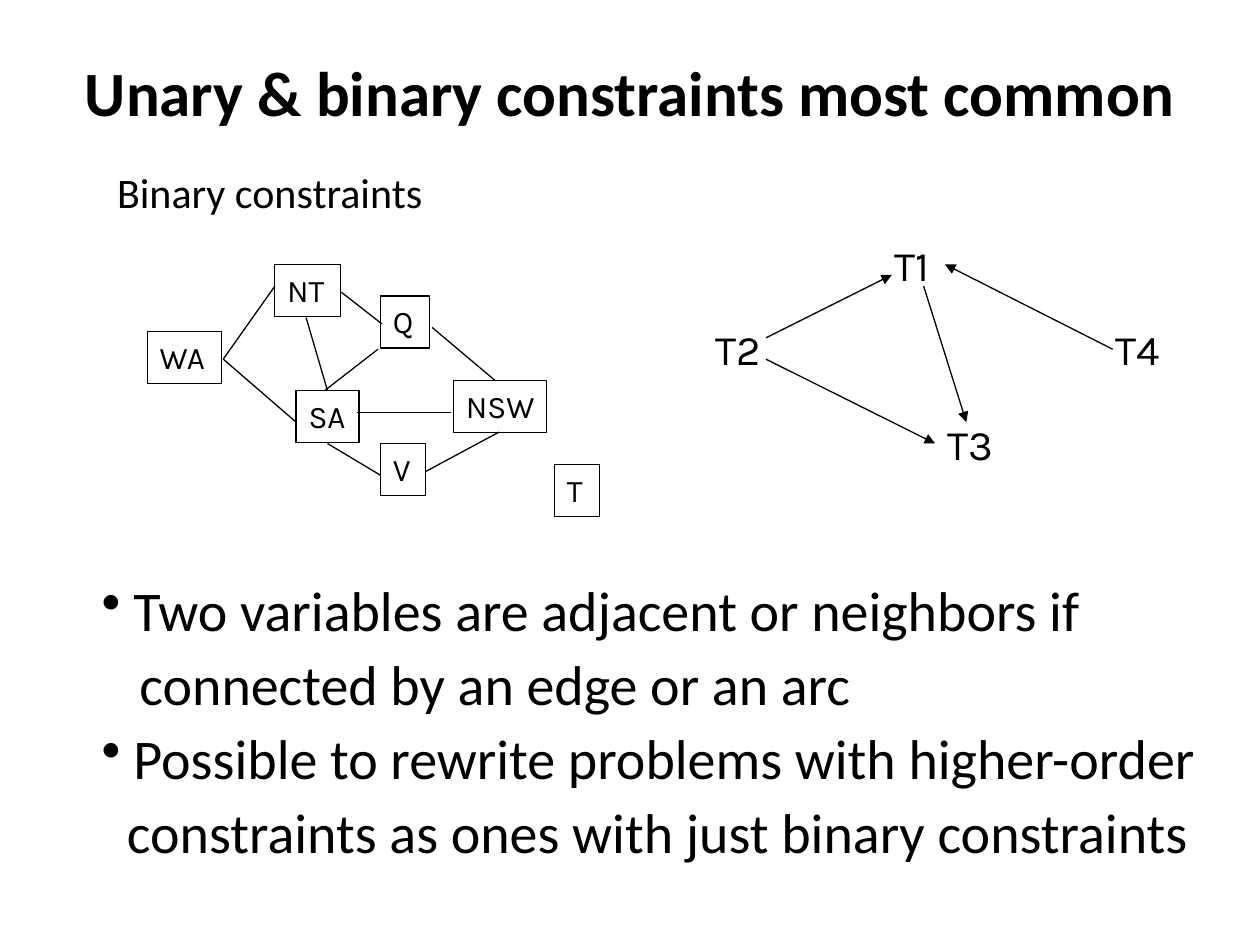
"""Build a slide on unary and binary constraints with two constraint graphs."""
from dataclasses import dataclass

from lxml.etree import SubElement
from pptx import Presentation
from pptx.dml.color import RGBColor
from pptx.enum.shapes import MSO_CONNECTOR as Connector, MSO_SHAPE as Shape
from pptx.enum.text import MSO_ANCHOR as Anchor, PP_ALIGN as Align
from pptx.oxml.ns import qn
from pptx.shapes.shapetree import GroupShapes, SlideShapes
from pptx.util import Cm, Pt

BLACK = RGBColor(0x00, 0x00, 0x00)
BODY_FONT = "Calibri"
GRAPH_FONT = "Karla"
LINE_WIDTH = Pt(0.75)
REGION_HEIGHT = 1.05
TASK_WIDTH, TASK_HEIGHT = 1.48, 1.27
HANGING = 0.64


@dataclass(frozen=True)
class Node:
    label: str
    left: float
    top: float
    width: float = TASK_WIDTH


@dataclass(frozen=True)
class Edge:
    start: tuple[float, float]
    end: tuple[float, float]


@dataclass(frozen=True)
class Line:
    text: str
    indent: float
    bulleted: bool = False


REGIONS = [
    Node("T", 11.18, 9.37, 0.91),
    Node("WA", 2.97, 6.68, 1.5),
    Node("NT", 5.54, 5.33, 1.32),
    Node("SA", 5.97, 7.87, 1.27),
    Node("Q", 7.67, 5.97, 0.99),
    Node("NSW", 9.14, 7.67, 1.88),
    Node("V", 7.67, 8.94, 0.91),
]
BORDERS = [
    Edge((4.5, 7.24), (5.54, 5.77)),
    Edge((4.5, 7.24), (5.97, 8.51)),
    Edge((6.17, 6.4), (6.6, 7.87)),
    Edge((6.6, 8.94), (7.67, 9.58)),
    Edge((8.71, 6.6), (9.98, 7.67)),
    Edge((6.88, 5.89), (7.7, 6.53)),
    Edge((8.59, 9.5), (10.06, 8.71)),
    Edge((7.62, 7.04), (6.55, 7.87)),
    Edge((7.19, 8.31), (9.09, 8.31)),
]
TASKS = [
    Node("T1", 17.78, 4.7),
    Node("T2", 14.17, 6.4),
    Node("T3", 18.85, 8.31),
    Node("T4", 22.23, 6.4),
]
PRECEDENCES = [
    Edge((18.62, 5.77), (19.48, 8.51)),
    Edge((15.44, 6.81), (17.98, 5.54)),
    Edge((15.44, 7.24), (18.85, 8.94)),
    Edge((22.43, 7.04), (19.05, 5.33)),
]
POINTS = [
    Line("Two variables are adjacent or neighbors if", HANGING, True),
    Line("connected by an edge or an arc", 0.76),
    Line("Possible to rewrite problems with higher-order", HANGING, True),
    Line("constraints as ones with just binary constraints", 0.51),
]


def style_text(paragraph, text: str, size: int, font: str = BODY_FONT, bold: bool = False) -> None:
    paragraph.text = text
    paragraph.font.size = Pt(size)
    paragraph.font.name = font
    paragraph.font.bold = bold
    paragraph.font.color.rgb = BLACK


def add_text_frame(shapes: SlideShapes, left: float, top: float, width: float, height: float):
    frame = shapes.add_textbox(Cm(left), Cm(top), Cm(width), Cm(height)).text_frame
    frame.word_wrap = True
    return frame


def draw_region(shapes: GroupShapes, node: Node) -> None:
    shape = shapes.add_shape(
        Shape.RECTANGLE, Cm(node.left), Cm(node.top), Cm(node.width), Cm(REGION_HEIGHT)
    )
    shape.shadow.inherit = False
    shape.fill.background()
    shape.line.color.rgb = BLACK
    shape.line.width = LINE_WIDTH
    frame = shape.text_frame
    frame.word_wrap = False
    frame.vertical_anchor = Anchor.TOP
    paragraph = frame.paragraphs[0]
    paragraph.alignment = Align.LEFT
    style_text(paragraph, node.label, 18, GRAPH_FONT)


def draw_task(shapes: GroupShapes, node: Node) -> None:
    frame = add_text_frame(shapes, node.left, node.top, node.width, TASK_HEIGHT)
    frame.word_wrap = False
    style_text(frame.paragraphs[0], node.label, 24, GRAPH_FONT)


def draw_edge(shapes: GroupShapes, edge: Edge, arrow: bool = False) -> None:
    connector = shapes.add_connector(
        Connector.STRAIGHT, *(Cm(value) for value in edge.start + edge.end)
    )
    connector.line.color.rgb = BLACK
    connector.line.width = LINE_WIDTH
    if arrow:
        SubElement(connector.line._get_or_add_ln(), qn("a:tailEnd"), type="triangle")
    SubElement(connector._element.spPr, qn("a:effectLst"))


def draw_points(shapes: SlideShapes, lines: list[Line]) -> None:
    frame = add_text_frame(shapes, 1.8, 11.35, 22.91, 6.27)
    for index, line in enumerate(lines):
        paragraph = frame.add_paragraph() if index else frame.paragraphs[0]
        style_text(paragraph, line.text, 32)
        paragraph.line_spacing = 1.1
        properties = paragraph._p.get_or_add_pPr()
        properties.set("marL", str(Cm(line.indent)))
        if line.bulleted:
            properties.set("indent", str(-Cm(HANGING)))
            bullet = properties.makeelement(qn("a:buChar"), {"char": "•"})
            properties.insert_element_before(bullet, "a:tabLst", "a:defRPr", "a:extLst")


def main() -> None:
    presentation = Presentation()
    presentation.slide_width, presentation.slide_height = Cm(25.4), Cm(19.05)
    slide = presentation.slides.add_slide(presentation.slide_layouts[6])
    shapes = slide.shapes

    title = add_text_frame(shapes, 0, 0.25, 25.4, 3.18)
    title.vertical_anchor = Anchor.MIDDLE
    title.paragraphs[0].alignment = Align.CENTER
    style_text(title.paragraphs[0], "Unary & binary constraints most common", 36, bold=True)

    subtitle = add_text_frame(shapes, 2.11, 3.23, 9.96, 2.34)
    style_text(subtitle.paragraphs[0], "Binary constraints", 24)

    region_graph = shapes.add_group_shape().shapes
    for region in REGIONS:
        draw_region(region_graph, region)
    for border in BORDERS:
        draw_edge(region_graph, border)

    draw_points(shapes, POINTS)

    task_graph = shapes.add_group_shape().shapes
    for task in TASKS:
        draw_task(task_graph, task)
    for precedence in PRECEDENCES:
        draw_edge(task_graph, precedence, arrow=True)

    presentation.save("out.pptx")


if __name__ == "__main__":
    main()
